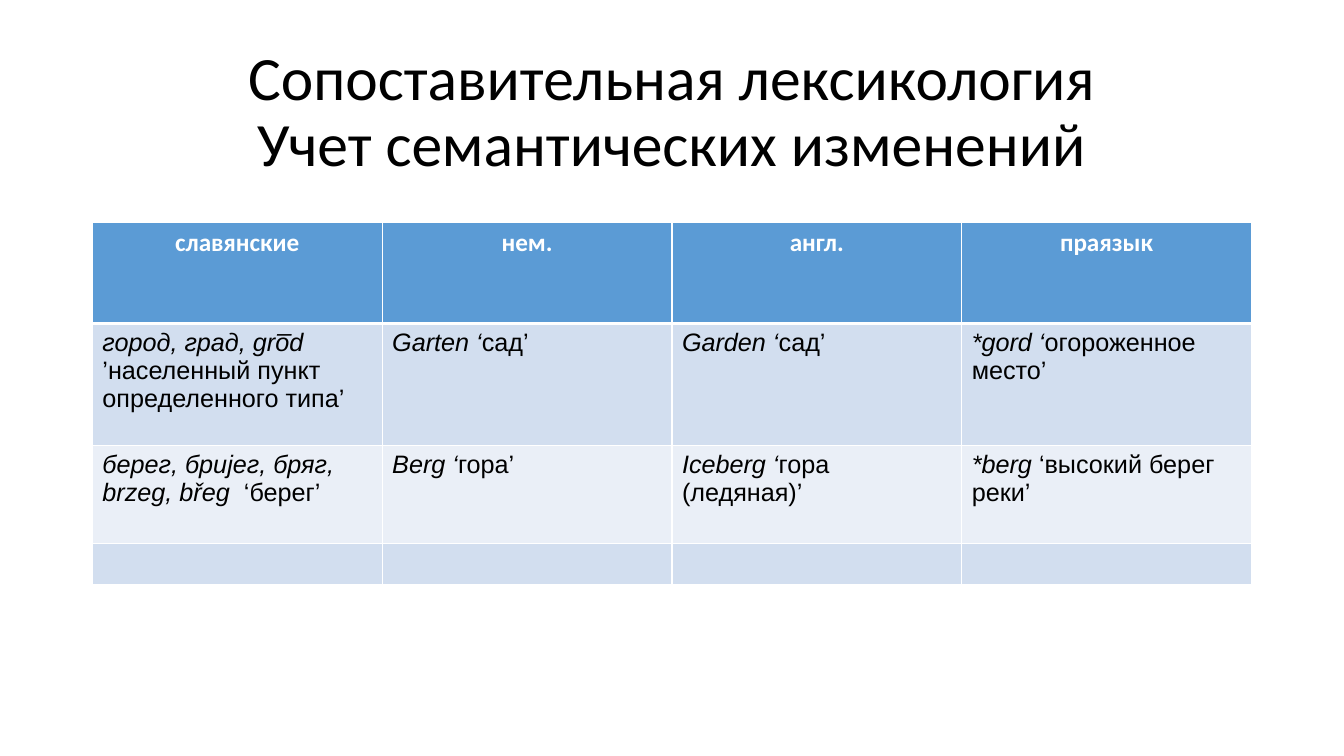
from dataclasses import dataclass
from typing import NamedTuple

from lxml.etree import SubElement
from pptx import Presentation
from pptx.dml.color import RGBColor
from pptx.enum.text import MSO_ANCHOR, MSO_AUTO_SIZE, PP_ALIGN
from pptx.oxml.ns import qn
from pptx.slide import Slide
from pptx.table import Table, _Cell
from pptx.text.text import _Run
from pptx.util import Pt


@dataclass(frozen=True)
class Theme:
    text: str = "000000"
    header_text: str = "FFFFFF"
    header_fill: str = "5B9BD5"
    bands: tuple[str, str] = ("D2DEEF", "EAEFF7")
    border: str = "FFFFFF"
    heading_font: str = "Calibri"
    body_font: str = "Arial"
    title_size: float = 44
    table_size: float = 18
    thin_border: float = 1
    thick_border: float = 3


class Entry(NamedTuple):
    term: str
    meaning: str


class WordRow(NamedTuple):
    height: float
    entries: tuple[Entry, ...]


THEME = Theme()
TITLE = "Сопоставительная лексикология\vУчет семантических изменений"
LANGUAGES = ("славянские", "нем.", "англ.", "праязык")
LEFT, WIDTH = 66, 828
TABLE_TOP, HEADER_HEIGHT = 159, 72
WORD_ROWS = (
    WordRow(87.5, (
        Entry("город, град, gro̅d ", "’населенный пункт определенного типа’"),
        Entry("Garten ‘", "сад’"),
        Entry("Garden ‘", "сад’"),
        Entry("*gord ‘", "огороженное место’"),
    )),
    WordRow(70, (
        Entry("берег, брujeг, бряг, brzeg, břeg  ", "‘берег’"),
        Entry("Berg ‘", "гора’"),
        Entry("Iceberg ‘", "гора (ледяная)’"),
        Entry("*berg ", "‘высокий берег реки’"),
    )),
    WordRow(29.2, ()),
)


def format_run(run: _Run, font: str, size: float, color: str,
               bold: bool = False, italic: bool = False) -> None:
    run.font.name = font
    run.font.size = Pt(size)
    run.font.bold = bold
    run.font.italic = italic
    run.font.color.rgb = RGBColor.from_string(color)


def add_title(slide: Slide) -> None:
    title = slide.shapes.title
    title.left, title.top = Pt(LEFT), Pt(28.75)
    title.width, title.height = Pt(WIDTH), Pt(104.4)
    frame = title.text_frame
    frame.auto_size = MSO_AUTO_SIZE.NONE
    frame.vertical_anchor = MSO_ANCHOR.MIDDLE
    paragraph = frame.paragraphs[0]
    paragraph.text = TITLE
    paragraph.alignment = PP_ALIGN.CENTER
    paragraph.line_spacing = 0.9
    for run in paragraph.runs:
        format_run(run, THEME.heading_font, THEME.title_size, THEME.text)


def style_cell(cell: _Cell, fill: str, top: float, bottom: float) -> None:
    """Draw the four borders, then the fill, in the order the schema requires."""
    properties = cell._tc.get_or_add_tcPr()
    thin = THEME.thin_border
    for side, width in (("lnL", thin), ("lnR", thin), ("lnT", top), ("lnB", bottom)):
        line = SubElement(properties, qn(f"a:{side}"), w=str(Pt(width)))
        line_fill = SubElement(line, qn("a:solidFill"))
        SubElement(line_fill, qn("a:srgbClr"), val=THEME.border)
    cell.fill.solid()
    cell.fill.fore_color.rgb = RGBColor.from_string(fill)


def fill_header(table: Table) -> None:
    for cell, language in zip(table.rows[0].cells, LANGUAGES):
        style_cell(cell, THEME.header_fill, THEME.thin_border, THEME.thick_border)
        paragraph = cell.text_frame.paragraphs[0]
        paragraph.text = language
        paragraph.alignment = PP_ALIGN.CENTER
        format_run(paragraph.runs[0], THEME.heading_font, THEME.table_size,
                   THEME.header_text, bold=True)


def write_entry(cell: _Cell, entry: Entry) -> None:
    paragraph = cell.text_frame.paragraphs[0]
    for text, italic in ((entry.term, True), (entry.meaning, False)):
        run = paragraph.add_run()
        run.text = text
        format_run(run, THEME.body_font, THEME.table_size, THEME.text, italic=italic)


def add_word_table(slide: Slide) -> None:
    heights = [HEADER_HEIGHT, *(row.height for row in WORD_ROWS)]
    table = slide.shapes.add_table(
        len(heights), len(LANGUAGES),
        Pt(LEFT), Pt(TABLE_TOP), Pt(WIDTH), Pt(sum(heights))).table
    for row, height in zip(table.rows, heights):
        row.height = Pt(height)
    fill_header(table)
    for index, word_row in enumerate(WORD_ROWS):
        cells = list(table.rows[index + 1].cells)
        top = THEME.thin_border if index else THEME.thick_border
        for cell in cells:
            style_cell(cell, THEME.bands[index % 2], top, THEME.thin_border)
        for cell, entry in zip(cells, word_row.entries):
            write_entry(cell, entry)


def main() -> None:
    presentation = Presentation()
    presentation.slide_width, presentation.slide_height = Pt(960), Pt(540)
    slide = presentation.slides.add_slide(presentation.slide_layouts[5])
    add_title(slide)
    add_word_table(slide)
    presentation.save("out.pptx")


if __name__ == "__main__":
    main()
